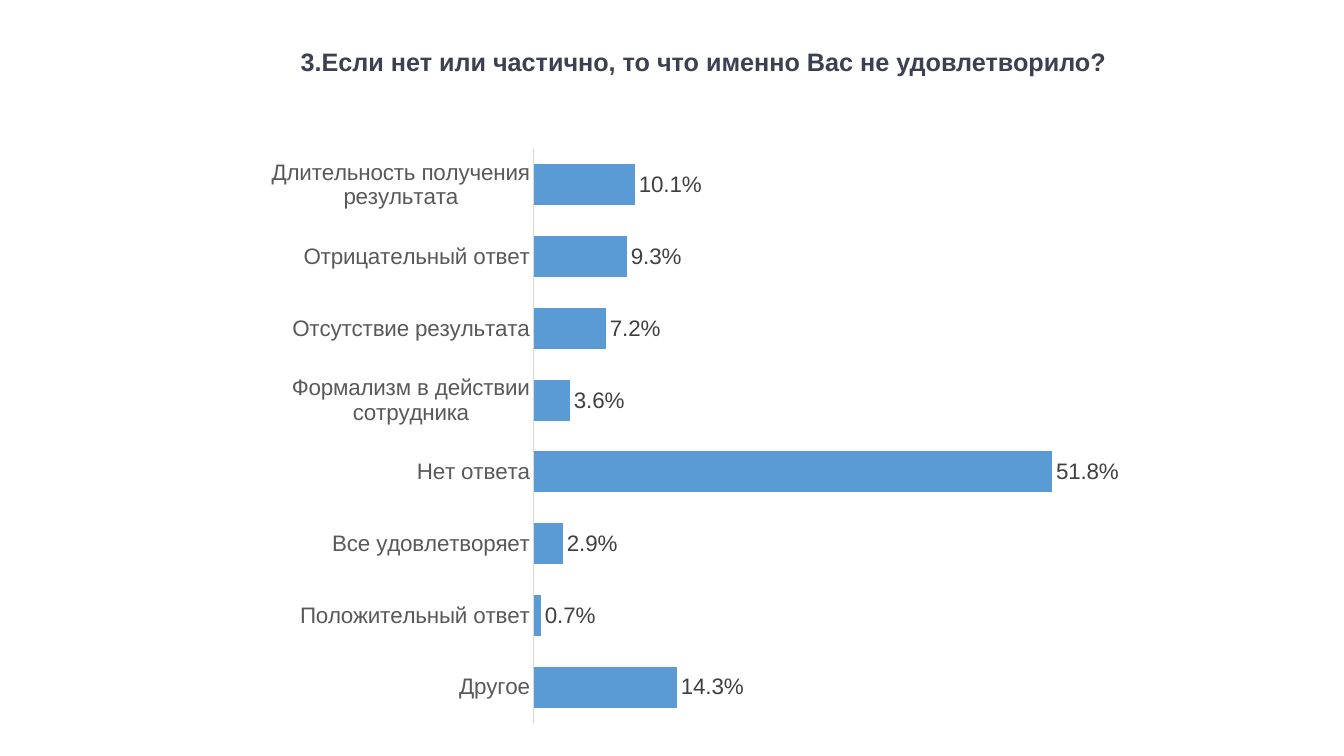
from lxml import etree
from pptx import Presentation
from pptx.chart.data import CategoryChartData
from pptx.dml.color import RGBColor
from pptx.enum.chart import XL_CHART_TYPE, XL_LABEL_POSITION, XL_TICK_MARK
from pptx.enum.text import MSO_ANCHOR, PP_ALIGN
from pptx.util import Pt

BAR_CLUSTERED = XL_CHART_TYPE.BAR_CLUSTERED
OUTSIDE_END = XL_LABEL_POSITION.OUTSIDE_END
NO_TICKS = XL_TICK_MARK.NONE
MIDDLE = MSO_ANCHOR.MIDDLE
CENTER = PP_ALIGN.CENTER

FONT = "Arial"
TITLE_ONLY = 5
PERCENT = "0.0%"
ANSWERS = [
    ("Другое", 0.143),
    ("Положительный ответ", 0.007),
    ("Все удовлетворяет", 0.029),
    ("Нет ответа", 0.518),
    ("Формализм в действии сотрудника", 0.036),
    ("Отсутствие результата", 0.072),
    ("Отрицательный ответ", 0.093),
    ("Длительность получения результата", 0.101),
]
PLOT_AREA = {"x": 0.31, "y": 0.02, "w": 0.67, "h": 0.96}


def color(hex_text):
    return RGBColor.from_string(hex_text)


def style_font(font, size, hex_text, bold=False):
    font.name = FONT
    font.size = Pt(size)
    font.bold = bold
    font.color.rgb = color(hex_text)


presentation = Presentation()
presentation.slide_width = Pt(960)
presentation.slide_height = Pt(540)
slide = presentation.slides.add_slide(presentation.slide_layouts[TITLE_ONLY])

# Title
title = slide.shapes.title
title.left, title.top, title.width, title.height = Pt(193), Pt(29.5), Pt(619), Pt(29)
title.text_frame.word_wrap = True
title.text_frame.vertical_anchor = MIDDLE
paragraph = title.text_frame.paragraphs[0]
paragraph.alignment = CENTER
run = paragraph.add_run()
run.text = "3.Если нет или частично, то что именно Вас не удовлетворило?"
style_font(run.font, 18, "3C4052", bold=True)

# Bar chart of the answers
chart_data = CategoryChartData(number_format=PERCENT)
chart_data.categories = [answer for answer, share in ANSWERS]
chart_data.add_series("Series 1", [share for answer, share in ANSWERS])
chart = slide.shapes.add_chart(
    BAR_CLUSTERED, Pt(183), Pt(98), Pt(640), Pt(427), chart_data
).chart
chart.has_title = False
chart.has_legend = False
style_font(chart.font, 16, "000000")

category_axis = chart.category_axis
category_axis.major_tick_mark = NO_TICKS
category_axis.minor_tick_mark = NO_TICKS
category_axis.has_major_gridlines = False
category_axis.format.line.color.rgb = color("D9D9D9")
category_axis.format.line.width = Pt(0.75)
style_font(category_axis.tick_labels.font, 16, "595959")

value_axis = chart.value_axis
value_axis.minimum_scale = 0
value_axis.maximum_scale = 0.6
value_axis.has_major_gridlines = False
value_axis.visible = False

plot = chart.plots[0]
plot.gap_width = 75
plot.vary_by_categories = False
series = plot.series[0]
series.format.fill.solid()
series.format.fill.fore_color.rgb = color("5B9BD5")

plot.has_data_labels = True
labels = plot.data_labels
labels.show_value = True
labels.number_format = PERCENT
labels.number_format_is_linked = False
labels.position = OUTSIDE_END
style_font(labels.font, 16, "404040")

# Fixed inner plot area, as fractions of the chart
plot_area = chart._chartSpace.chart.plotArea
namespace = plot_area.nsmap["c"]
for old_layout in plot_area.findall(f"{{{namespace}}}layout"):
    plot_area.remove(old_layout)
layout = etree.Element(f"{{{namespace}}}layout")
manual = etree.SubElement(layout, f"{{{namespace}}}manualLayout")
settings = {"layoutTarget": "inner", "xMode": "edge", "yMode": "edge", **PLOT_AREA}
for name, value in settings.items():
    etree.SubElement(manual, f"{{{namespace}}}{name}", val=str(value))
plot_area.insert(0, layout)

presentation.save("out.pptx")
